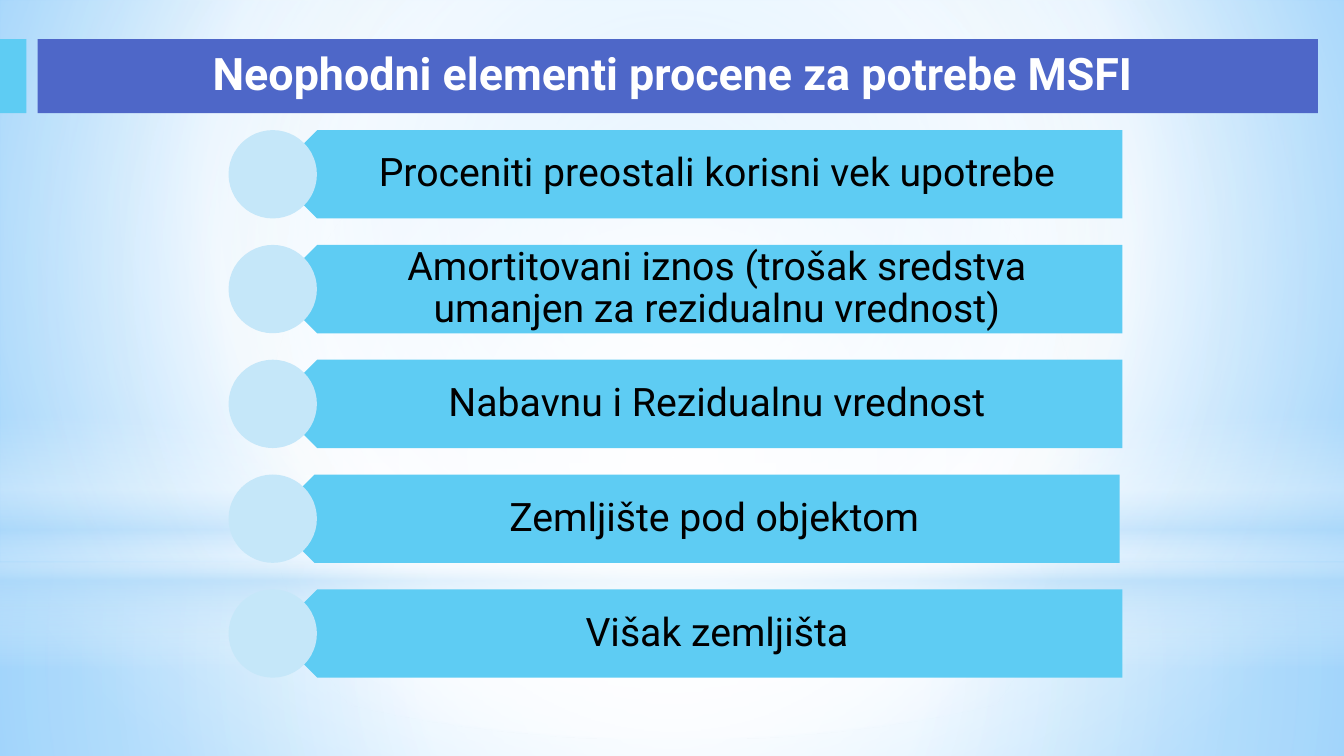
import lxml.etree
import pptx
import pptx.dml.color
import pptx.enum.shapes
import pptx.enum.text
import pptx.oxml.ns
import pptx.util

Cm = pptx.util.Cm
SHAPE = pptx.enum.shapes.MSO_SHAPE
TEXT = pptx.enum.text

HEADING = "Neophodni elementi procene za potrebe MSFI"
ELEMENTS = [
    ("Proceniti preostali korisni vek upotrebe", 0),
    ("Amortitovani iznos (trošak sredstva umanjen za rezidualnu vrednost)", 0),
    ("Nabavnu i Rezidualnu vrednost", 0),
    ("Zemljište pod objektom", -0.05),
    ("Višak zemljišta", 0),
]
THEME = {
    "font": "Roboto",
    "heading_size": 24,
    "element_size": 21,
    "heading_text": "FFFFFF",
    "element_text": "000000",
    "banner": "4E67C8",
    "accent": "5ECCF3",
    "circle": "C5E7F9",
    "white": "FFFFFF",
    "haze": "B4DCFA",
    "sky": "9ED5FF",
    "deep_sky": "5BB9FF",
}
SLIDE_SIZE = (25.4, 14.29)
CENTRE = (50, 50, 50, 50)
BACKDROP = ([(0, "sky", 100), (60, "white", 100), (100, "deep_sky", 100)], (20, 10, 20, 60))
GLOWS = [
    (SHAPE.RECTANGLE, (0, 10.64, 25.4, 3.65),
     [(0, "white", 91), (37, "white", 76), (100, "haze", 79)], CENTRE),
    (SHAPE.RECTANGLE, (0, 0, 25.4, 10.64),
     [(0, "white", 89), (48, "white", 62), (100, "haze", 79)], CENTRE),
    (SHAPE.RECTANGLE, (0, 7.85, 25.4, 4.78),
     [(0, "white", 0), (29, "white", 30), (45, "haze", 40),
      (55, "white", 26), (65, "haze", 60), (100, "white", 0)], None),
    (SHAPE.OVAL, (0, 3.33, 25.4, 10.64), [(0, "white", 100), (56, "white", 0)], CENTRE),
]
BANNERS = [("banner", (0.71, 0.74, 24.2, 1.4)), ("accent", (0, 0.74, 0.5, 1.4))]
HEADING_BOX = (0.71, 0.99, 24, 0.76)
FIRST_TOP, ROW_STEP, ROW_HEIGHT = 2.46, 2.17, 1.67
CIRCLE_LEFT = 4.32
ARROW_LEFT, ARROW_WIDTH = 5.16, 16.05
LABEL_LEFT, LABEL_WIDTH = 5.56, 15.65
FRAME_FORMAT = {
    "word_wrap": True,
    "auto_size": TEXT.MSO_AUTO_SIZE.NONE,
    "vertical_anchor": TEXT.MSO_ANCHOR.MIDDLE,
}
LABEL_MARGINS = {
    "margin_left": Cm(0.74),
    "margin_right": Cm(0.41),
    "margin_top": Cm(0.23),
    "margin_bottom": Cm(0.23),
}


def colour(name):
    return pptx.dml.color.RGBColor.from_string(THEME[name])


def apply_format(target, values):
    for name, value in values.items():
        setattr(target, name, value)


def apply_gradient(fill, properties, stops, focus):
    fill.solid()
    qn = pptx.oxml.ns.qn
    gradient = lxml.etree.Element(qn("a:gradFill"), rotWithShape="1")
    stop_list = lxml.etree.SubElement(gradient, qn("a:gsLst"))
    for position, name, opacity in stops:
        stop = lxml.etree.SubElement(stop_list, qn("a:gs"), pos=str(position * 1000))
        tint = lxml.etree.SubElement(stop, qn("a:srgbClr"), val=THEME[name])
        if opacity < 100:
            lxml.etree.SubElement(tint, qn("a:alpha"), val=str(opacity * 1000))
    if focus:
        radial = lxml.etree.SubElement(gradient, qn("a:path"), path="circle")
        edges = {side: str(value * 1000) for side, value in zip("ltrb", focus)}
        lxml.etree.SubElement(radial, qn("a:fillToRect"), edges)
    else:
        lxml.etree.SubElement(gradient, qn("a:lin"), ang="5400000", scaled="0")
    properties.replace(properties.find(qn("a:solidFill")), gradient)


def add_block(slide, kind, box, fill_name=None):
    block = slide.shapes.add_shape(kind, *map(Cm, box))
    block.shadow.inherit = False
    block.line.fill.background()
    if fill_name:
        block.fill.solid()
        block.fill.fore_color.rgb = colour(fill_name)
    return block


def write_text(shape, text, role, bold, margins, spacing):
    frame = shape.text_frame
    apply_format(frame, {**FRAME_FORMAT, **margins})
    frame.text = text
    paragraph = frame.paragraphs[0]
    apply_format(paragraph, {
        "alignment": TEXT.PP_ALIGN.CENTER,
        "line_spacing": spacing,
        "space_before": pptx.util.Pt(0),
    })
    font = paragraph.runs[0].font
    apply_format(font, {
        "name": THEME["font"],
        "size": pptx.util.Pt(THEME[role + "_size"]),
        "bold": bold,
    })
    font.color.rgb = colour(role + "_text")


def add_element(slide, row, text, shift):
    top = FIRST_TOP + row * ROW_STEP
    arrow = add_block(slide, SHAPE.PENTAGON,
                      (ARROW_LEFT + shift, top, ARROW_WIDTH, ROW_HEIGHT), "accent")
    arrow.rotation = 180
    label = slide.shapes.add_textbox(
        *map(Cm, (LABEL_LEFT + shift, top, LABEL_WIDTH, ROW_HEIGHT)))
    write_text(label, text, "element", False, LABEL_MARGINS, 0.9)
    add_block(slide, SHAPE.OVAL, (CIRCLE_LEFT, top, ROW_HEIGHT, ROW_HEIGHT), "circle")


def main():
    deck = pptx.Presentation()
    deck.slide_width, deck.slide_height = map(Cm, SLIDE_SIZE)
    slide = deck.slides.add_slide(deck.slide_layouts[5])

    backdrop = slide.background.fill
    backdrop.solid()
    apply_gradient(backdrop, slide.element.cSld.bg.bgPr, *BACKDROP)
    for kind, box, stops, focus in GLOWS:
        glow = add_block(slide, kind, box)
        apply_gradient(glow.fill, glow.element.spPr, stops, focus)
    for fill_name, box in BANNERS:
        add_block(slide, SHAPE.RECTANGLE, box, fill_name)

    heading = slide.shapes.title
    slide.shapes.element.append(heading.element)
    apply_format(heading, dict(zip(("left", "top", "width", "height"), map(Cm, HEADING_BOX))))
    write_text(heading, HEADING, "heading", True, {}, 1.0)

    for row, (text, shift) in enumerate(ELEMENTS):
        add_element(slide, row, text, shift)
    deck.save("out.pptx")


if __name__ == "__main__":
    main()
